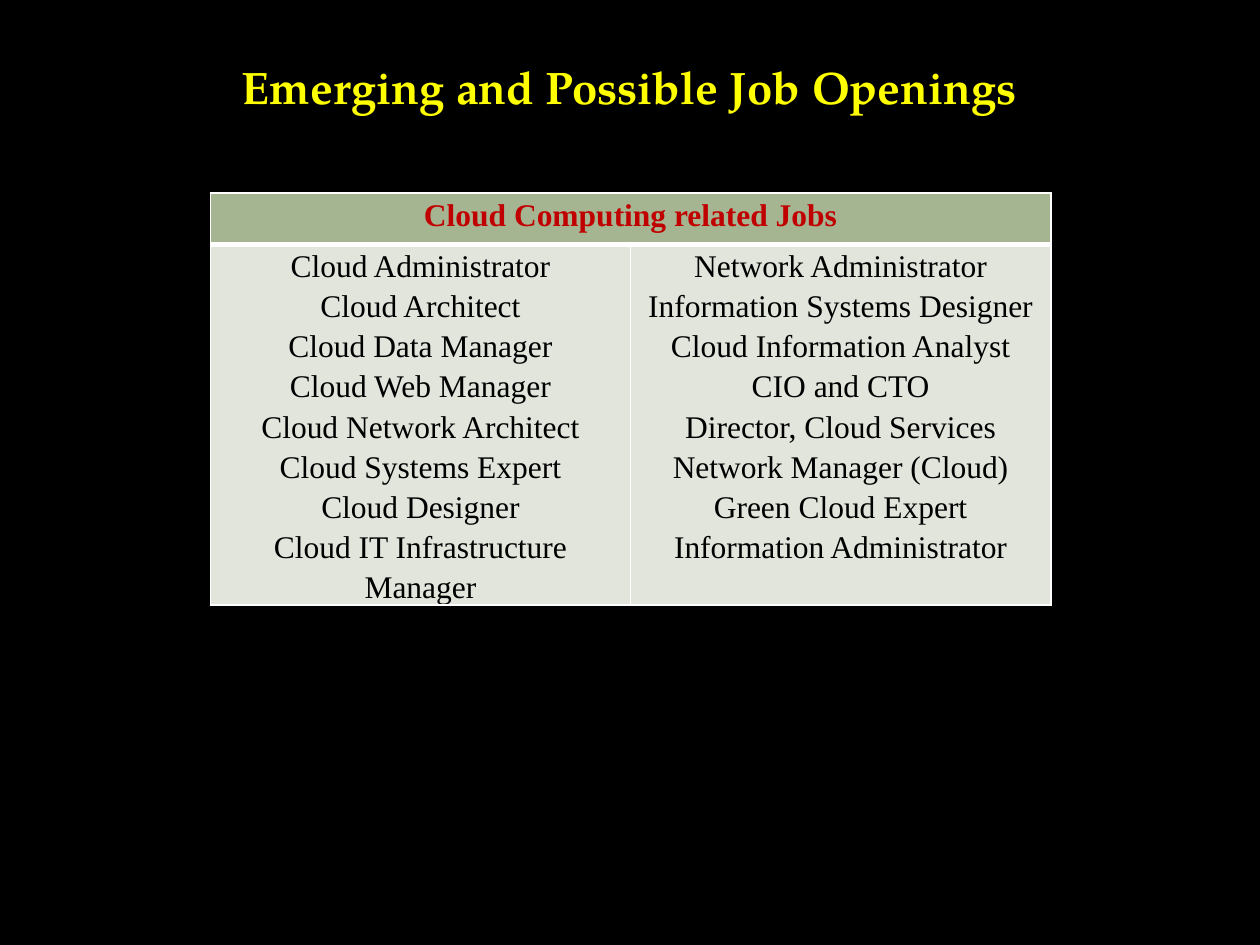
import dataclasses

import pptx
import pptx.dml.color
import pptx.enum.text
import pptx.oxml
import pptx.oxml.ns
import pptx.slide
import pptx.table
import pptx.text.text
import pptx.util

Inches = pptx.util.Inches
Pt = pptx.util.Pt
CENTER = pptx.enum.text.PP_ALIGN.CENTER


@dataclasses.dataclass(frozen=True)
class TextStyle:
    font: str
    size: float
    color: str
    bold: bool = False


@dataclasses.dataclass(frozen=True)
class CellStyle:
    text: TextStyle
    fill: str
    top: float
    bottom: float


HEADING = TextStyle("TeX Gyre Pagella", 26, "FFFF00", True)
THIN, THICK = 1, 3
HEADER_CELL = CellStyle(
    TextStyle("Times New Roman", 18, "C00000", True), "A5B592", THIN, THICK)
JOB_CELL = CellStyle(
    TextStyle("Times New Roman", 18, "000000"), "E1E5DC", THICK, THIN)

JOB_COLUMNS = [
    ["Cloud Administrator", "Cloud Architect", "Cloud Data Manager",
     "Cloud Web Manager", "Cloud Network Architect", "Cloud Systems Expert",
     "Cloud Designer", "Cloud IT Infrastructure Manager"],
    ["Network Administrator", "Information Systems Designer",
     "Cloud Information Analyst", "CIO and CTO", "Director, Cloud Services",
     "Network Manager (Cloud)", "Green Cloud Expert",
     "Information Administrator"],
]


def rgb(value: str) -> pptx.dml.color.RGBColor:
    return pptx.dml.color.RGBColor.from_string(value)


def add_span(para: pptx.text.text._Paragraph, text: str, style: TextStyle) -> None:
    para.alignment = CENTER
    span = para.add_run()
    span.text = text
    span.font.name = style.font
    span.font.size = Pt(style.size)
    span.font.bold = style.bold
    span.font.color.rgb = rgb(style.color)


def add_border(cell: pptx.table._Cell, side: str, width: float) -> None:
    line = pptx.oxml.parse_xml(
        f'<a:{side} {pptx.oxml.ns.nsdecls("a")} w="{Pt(width)}"><a:solidFill>'
        f'<a:srgbClr val="FFFFFF"/></a:solidFill></a:{side}>')
    cell._tc.get_or_add_tcPr().append(line)


def format_cell(cell: pptx.table._Cell, lines: list[str], style: CellStyle) -> None:
    cell.margin_left = cell.margin_right = Inches(0.07)
    cell.margin_top = cell.margin_bottom = 0
    # Borders come before the fill in the cell properties
    for side, width in (("lnL", THIN), ("lnR", THIN),
                        ("lnT", style.top), ("lnB", style.bottom)):
        add_border(cell, side, width)
    cell.fill.solid()
    cell.fill.fore_color.rgb = rgb(style.fill)
    frame = cell.text_frame
    for index, text in enumerate(lines):
        para = frame.add_paragraph() if index else frame.paragraphs[0]
        para.line_spacing = 1.15
        add_span(para, text, style.text)


def add_heading(page: pptx.slide.Slide, text: str) -> None:
    box = page.placeholders[1]
    box.left, box.top = Inches(0.5), Inches(0.42)
    box.width, box.height = Inches(9), Inches(6.25)
    box.text_frame.auto_size = pptx.enum.text.MSO_AUTO_SIZE.NONE
    para = box.text_frame.paragraphs[0]
    para.space_before = Pt(6)
    properties = para._p.get_or_add_pPr()
    properties.set("marL", str(Inches(0.3)))
    properties.set("indent", str(Inches(-0.3)))
    properties.append(pptx.oxml.parse_xml(
        f'<a:buNone {pptx.oxml.ns.nsdecls("a")}/>'))
    add_span(para, text, HEADING)


def add_jobs_table(page: pptx.slide.Slide) -> None:
    holder = page.shapes.add_table(
        2, len(JOB_COLUMNS), Inches(1.67), Inches(1.53), Inches(6.67), Inches(3.51))
    table = holder.table
    for row in table.rows:
        row.height = Inches(0.41)
    holder.height = Inches(3.51)
    table.cell(0, 0).merge(table.cell(0, 1))
    for column, jobs in enumerate(JOB_COLUMNS):
        header = [] if column else ["Cloud Computing related Jobs"]
        format_cell(table.cell(0, column), header, HEADER_CELL)
        format_cell(table.cell(1, column), jobs, JOB_CELL)


def main() -> None:
    deck = pptx.Presentation()
    deck.slide_width, deck.slide_height = Inches(10), Inches(7.5)
    page = deck.slides.add_slide(deck.slide_layouts[1])
    page.background.fill.solid()
    page.background.fill.fore_color.rgb = rgb("000000")

    # The heading sits in the body placeholder, so the title one goes
    title = page.shapes.title.element
    title.getparent().remove(title)
    add_heading(page, "Emerging and Possible Job Openings")
    add_jobs_table(page)
    deck.save("out.pptx")


if __name__ == "__main__":
    main()
